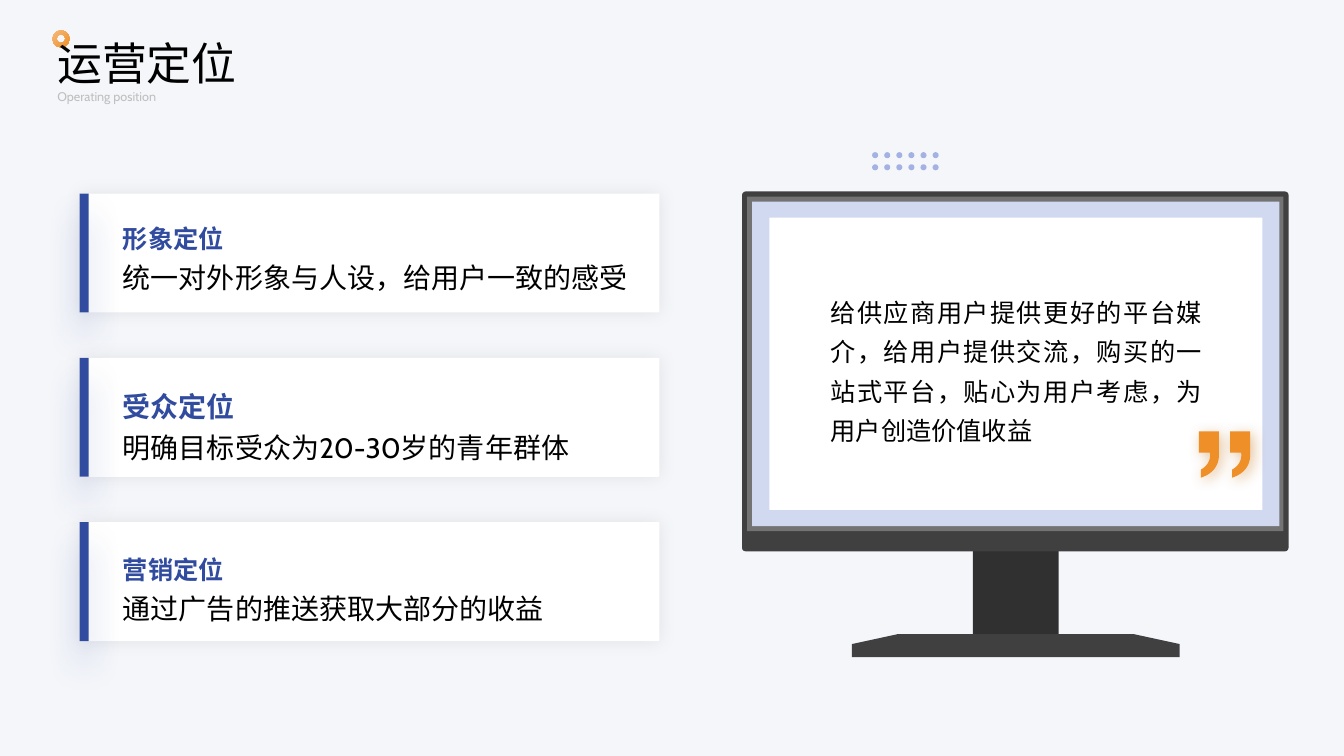
from itertools import product

from lxml import etree
from pptx import Presentation
from pptx.dml.color import RGBColor
from pptx.enum.shapes import MSO_SHAPE
from pptx.enum.text import MSO_ANCHOR, PP_ALIGN
from pptx.oxml.ns import qn
from pptx.util import Inches, Pt

RECT, ROUND = MSO_SHAPE.RECTANGLE, MSO_SHAPE.ROUNDED_RECTANGLE
OVAL, DONUT = MSO_SHAPE.OVAL, MSO_SHAPE.DONUT
TOP, MIDDLE = MSO_ANCHOR.TOP, MSO_ANCHOR.MIDDLE
LEFT, JUSTIFY = PP_ALIGN.LEFT, PP_ALIGN.JUSTIFY

WIDTH, HEIGHT = 13.33, 7.5
BLUE, ORANGE, BLACK, WHITE = "314C9F", "EE8F28", "000000", "FFFFFF"
DARK = "404040"

TITLE, SUBTITLE = "运营定位", "Operating position"
CARDS = [
    ("形象定位", 18, "统一对外形象与人设，给用户一致的感受"),
    ("受众定位", 20, "明确目标受众为20-30岁的青年群体"),
    ("营销定位", 18, "通过广告的推送获取大部分的收益"),
]
STATEMENT = "给供应商用户提供更好的平台媒介，给用户提供交流，购买的一站式平台，贴心为用户考虑，为用户创造价值收益"

CARD_X, CARD_Y, CARD_W, CARD_H, CARD_STEP = 0.79, 1.92, 5.75, 1.18, 1.63
CARD_SHADOW = ("000000", 7, 13, 0, 0)
BAR_SHADOW = (BLUE, 28, 24, 17, 90)
QUOTE_SHADOW = ("C16C0F", 40, 10, 3, 45)

FOOT = [(8.45, 6.52), (8.45, 6.39), (8.91, 6.29), (11.24, 6.29), (11.7, 6.39), (11.7, 6.52)]
SCREEN = [
    (7.41, 1.95, 5.32, 3.32, "737373"),
    (7.46, 2, 5.23, 3.22, "D1D9F1"),
    (7.63, 2.16, 4.89, 2.9, WHITE),
]
DOT_X, DOT_Y, DOT_SIZE, DOT_STEP = 8.65, 1.51, 0.06, 0.12
QUOTE_X, QUOTE_Y, QUOTE_STEP = 11.89, 4.28, 0.31
TAIL_IN = [(0.02, 0.38), (0.09, 0.34), (0.12, 0.28), (0.11, 0.21)]
TAIL_OUT = [(0.2, 0.23), (0.2, 0.34), (0.14, 0.42), (0.02, 0.46)]


def rgb(value):
    """Turn a hex string into a colour."""
    return RGBColor.from_string(value)


def add_alpha(color, percent):
    """Set the opacity of a colour element."""
    etree.SubElement(color, qn("a:alpha")).set("val", str(percent * 1000))


def paint(sp, color, shadow=None):
    """Give a shape a plain fill, no outline and an optional soft shadow."""
    sp.fill.solid()
    sp.fill.fore_color.rgb = rgb(color)
    sp.line.fill.background()
    sp.shadow.inherit = False
    if shadow:
        tint, alpha, blur, distance, angle = shadow
        effects = sp.element.spPr.find(qn("a:effectLst"))
        outer = etree.SubElement(effects, qn("a:outerShdw"))
        outer.set("blurRad", str(Pt(blur)))
        outer.set("dist", str(Pt(distance)))
        outer.set("dir", str(angle * 60000))
        outer.set("algn", "ctr")
        outer.set("rotWithShape", "0")
        color_el = etree.SubElement(outer, qn("a:srgbClr"))
        color_el.set("val", tint)
        add_alpha(color_el, alpha)
    return sp


def add_box(s, kind, x, y, w, h, color, shadow=None):
    """Add a filled preset shape."""
    sp = s.shapes.add_shape(kind, Inches(x), Inches(y), Inches(w), Inches(h))
    return paint(sp, color, shadow)


def add_outline(s, contours, color, shadow=None):
    """Add a filled freeform made of closed contours."""
    first, *others = [[(Inches(x), Inches(y)) for x, y in c] for c in contours]
    builder = s.shapes.build_freeform(*first[0])
    builder.add_line_segments(first[1:])
    for contour in others:
        builder.move_to(*contour[0])
        builder.add_line_segments(contour[1:])
    return paint(builder.convert_to_shape(), color, shadow)


def add_text(s, x, y, w, h, lines, align=LEFT, spacing=0.9, anchor=TOP):
    """Add a text box with one run for each line."""
    tf = s.shapes.add_textbox(Inches(x), Inches(y), Inches(w), Inches(h)).text_frame
    tf.word_wrap = True
    tf.vertical_anchor = anchor
    for i, (text, size, font, color, bold) in enumerate(lines):
        p = tf.add_paragraph() if i else tf.paragraphs[0]
        p.alignment, p.line_spacing = align, spacing
        r = p.add_run()
        r.text = text
        r.font.size, r.font.name, r.font.bold = Pt(size), font, bold
        r.font.color.rgb = rgb(color)


def bezier(points, steps=12):
    """Sample a cubic curve."""
    a, b, c, d = points
    for t in (i / steps for i in range(steps + 1)):
        u = 1 - t
        yield tuple(u**3 * a[k] + 3 * u * u * t * b[k] + 3 * u * t * t * c[k] + t**3 * d[k]
                    for k in (0, 1))


def add_header(s):
    """Draw the background, the ring and the titles."""
    back = add_box(s, RECT, 0, 0, WIDTH, HEIGHT, "EAEEF6")
    add_alpha(back.element.spPr.find(".//" + qn("a:srgbClr")), 50)
    ring = add_box(s, DONUT, 0.52, 0.3, 0.17, 0.17, ORANGE)
    ring.fill.gradient()
    ring.fill.gradient_angle = 315
    for stop, color in zip(ring.fill.gradient_stops, ("F5BC7E", ORANGE)):
        stop.color.rgb = rgb(color)
    add_text(s, 0.47, 0.38, 6.39, 0.55, [(TITLE, 32, "Roboto", BLACK, False)], anchor=MIDDLE)
    add_text(s, 0.47, 0.87, 6.39, 0.2, [(SUBTITLE, 9, "Cabin", "BFBFBF", False)], anchor=MIDDLE)


def add_cards(s):
    """Stack the three positioning cards."""
    for i, (heading, size, body) in enumerate(CARDS):
        y = CARD_Y + i * CARD_STEP
        card = add_box(s, ROUND, CARD_X, y, CARD_W, CARD_H, WHITE, CARD_SHADOW)
        card.adjustments[0] = 0.01
        lines = [(heading, size, "Cabin", BLUE, True), (body, 20, "Cabin", BLACK, False)]
        add_text(s, CARD_X + 0.33, y + 0.19 + i * 0.01, 5.4, 0.85, lines, JUSTIFY, 1.2)
        add_box(s, RECT, CARD_X, y, 0.09, CARD_H, BLUE, BAR_SHADOW)


def add_monitor(s):
    """Draw the monitor, its dots, statement and quotation mark."""
    add_box(s, RECT, 9.65, 5.22, 0.85, 1.07, "303030")
    add_outline(s, [FOOT], DARK)
    frame = add_box(s, ROUND, 7.36, 1.9, 5.42, 3.57, DARK)
    frame.adjustments[0] = 0.01
    for x, y, w, h, color in SCREEN:
        add_box(s, RECT, x, y, w, h, color)
    for row, col in product(range(2), range(6)):
        add_box(s, OVAL, DOT_X + col * DOT_STEP, DOT_Y + row * DOT_STEP,
                DOT_SIZE, DOT_SIZE, "A3B2E3")
    add_text(s, 8.14, 2.81, 3.88, 1.65, [(STATEMENT, 18, "Cabin", BLACK, False)], JUSTIFY, 1.3)
    mark = [*bezier(TAIL_IN), (0, 0.21), (0, 0), (0.2, 0), *bezier(TAIL_OUT)]
    marks = [[(QUOTE_X + i * QUOTE_STEP + x, QUOTE_Y + y) for x, y in mark] for i in range(2)]
    add_outline(s, marks, ORANGE, QUOTE_SHADOW)


def main():
    """Build the slide and save it."""
    prs = Presentation()
    prs.slide_width, prs.slide_height = Inches(WIDTH), Inches(HEIGHT)
    s = prs.slides.add_slide(prs.slide_layouts[6])
    add_header(s)
    add_cards(s)
    add_monitor(s)
    prs.save("out.pptx")


if __name__ == "__main__":
    main()
